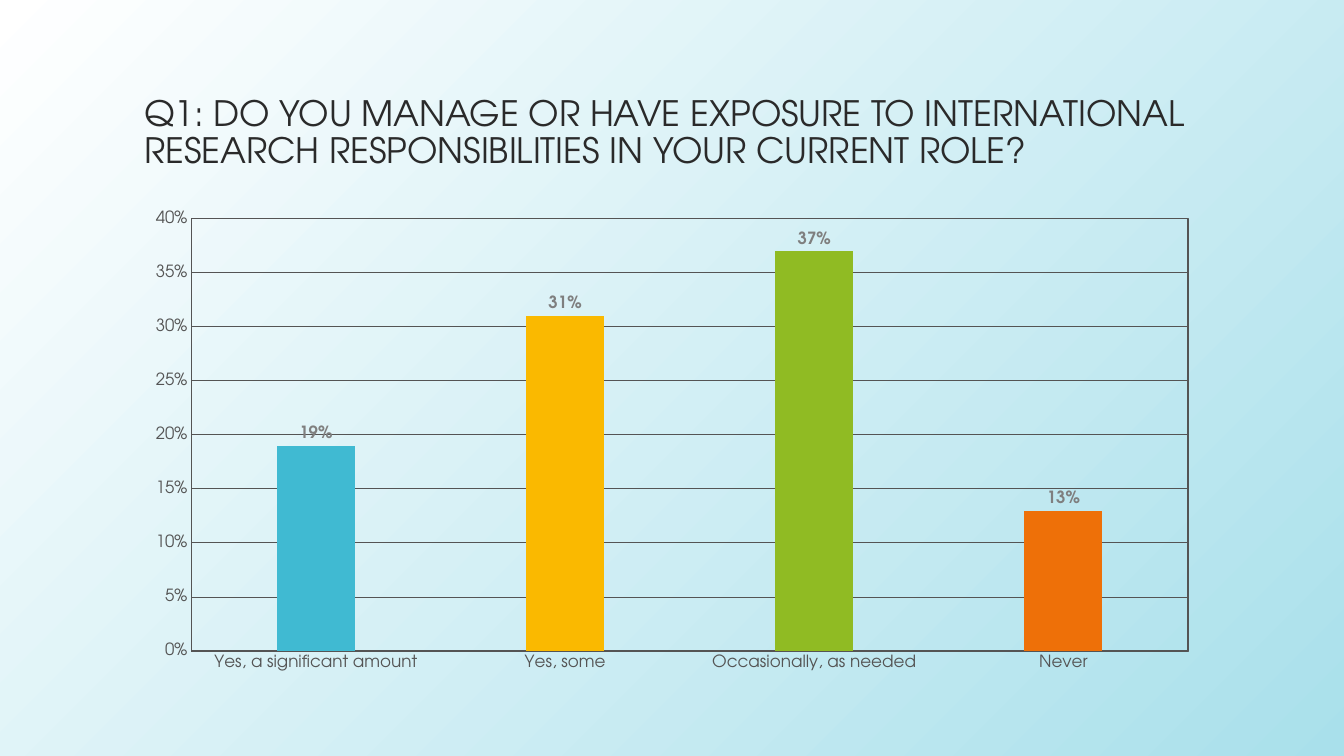
from dataclasses import dataclass

from lxml.etree import SubElement
from pptx import Presentation
from pptx.chart.chart import Chart
from pptx.chart.data import CategoryChartData
from pptx.dml.color import RGBColor
from pptx.enum.chart import XL_CHART_TYPE, XL_LABEL_POSITION, XL_TICK_MARK
from pptx.enum.text import MSO_ANCHOR
from pptx.oxml import parse_xml
from pptx.oxml.ns import nsdecls, qn
from pptx.slide import Slide
from pptx.text.text import Font
from pptx.util import Pt

FONT_NAME = "TeX Gyre Adventor"
WHITE = RGBColor(0xFF, 0xFF, 0xFF)
PALE_AQUA = RGBColor(0xA9, 0xE0, 0xEB)
INK = RGBColor(0x2A, 0x2A, 0x2A)
AXIS_GRAY = RGBColor(0x54, 0x54, 0x54)
LABEL_GRAY = RGBColor(0x7F, 0x7F, 0x7F)
BLUE = RGBColor(0x40, 0xBA, 0xD2)
YELLOW = RGBColor(0xFA, 0xB9, 0x00)
GREEN = RGBColor(0x90, 0xBB, 0x23)
ORANGE = RGBColor(0xEE, 0x70, 0x08)

LEFT, CONTENT_WIDTH = Pt(96), Pt(768)
QUESTION = (
    "Q1: DO YOU MANAGE OR HAVE EXPOSURE TO INTERNATIONAL "
    "RESEARCH RESPONSIBILITIES IN YOUR CURRENT ROLE?"
)


@dataclass(frozen=True)
class Answer:
    wording: str
    share: float
    color: RGBColor


ANSWERS = [
    Answer("Yes, a significant amount", 0.19, BLUE),
    Answer("Yes, some", 0.31, YELLOW),
    Answer("Occasionally, as needed", 0.37, GREEN),
    Answer("Never", 0.13, ORANGE),
]
PLOT_LAYOUT = {"x": 0.053, "y": 0.036, "w": 0.927, "h": 0.903}


def style_font(font: Font, size: float, color: RGBColor, bold: bool = False) -> None:
    font.name = FONT_NAME
    font.size = Pt(size)
    font.bold = bold
    font.color.rgb = color


def paint_background(slide: Slide) -> None:
    fill = slide.background.fill
    fill.gradient()
    fill.gradient_angle = 315
    for stop, color in zip(fill.gradient_stops, (WHITE, PALE_AQUA)):
        stop.color.rgb = color


def add_question(slide: Slide) -> None:
    frame = slide.shapes.add_textbox(LEFT, Pt(21.6), CONTENT_WIDTH, Pt(104.4)).text_frame
    frame.word_wrap = True
    frame.vertical_anchor = MSO_ANCHOR.BOTTOM
    frame.text = QUESTION
    paragraph = frame.paragraphs[0]
    paragraph.line_spacing = 0.9
    style_font(paragraph.runs[0].font, 25, INK)


def frame_plot_area(chart: Chart) -> None:
    plot_area = chart.element.find(f".//{qn('c:plotArea')}")
    for old_layout in plot_area.findall(qn("c:layout")):
        plot_area.remove(old_layout)
    layout = parse_xml(f"<c:layout {nsdecls('c')}/>")
    manual = SubElement(layout, qn("c:manualLayout"))
    settings = {"layoutTarget": "inner", "xMode": "edge", "yMode": "edge", **PLOT_LAYOUT}
    for tag, value in settings.items():
        SubElement(manual, qn(f"c:{tag}")).set("val", str(value))
    plot_area.insert(0, layout)
    plot_area.append(parse_xml(
        f"<c:spPr {nsdecls('c', 'a')}><a:noFill/><a:ln w='9525'><a:solidFill>"
        f"<a:srgbClr val='{AXIS_GRAY}'/></a:solidFill></a:ln></c:spPr>"
    ))


def style_axes(chart: Chart) -> None:
    for axis in (chart.category_axis, chart.value_axis):
        axis.major_tick_mark = XL_TICK_MARK.NONE
        axis.minor_tick_mark = XL_TICK_MARK.NONE
        style_font(axis.tick_labels.font, 12, AXIS_GRAY)
    category_line = chart.category_axis.format.line
    category_line.color.rgb = AXIS_GRAY
    category_line.width = Pt(1)
    shares = chart.value_axis
    shares.minimum_scale, shares.maximum_scale, shares.major_unit = 0, 0.4, 0.05
    shares.tick_labels.number_format = "0%"
    shares.tick_labels.number_format_is_linked = False
    shares.format.line.fill.background()
    gridline = shares.major_gridlines.format.line
    gridline.color.rgb = AXIS_GRAY
    gridline.width = Pt(0.75)


def style_columns(chart: Chart) -> None:
    plot = chart.plots[0]
    plot.vary_by_categories = False
    plot.gap_width = 219
    plot.overlap = -27
    series = plot.series[0]
    for index, answer in enumerate(ANSWERS):
        fill = series.points[index].format.fill
        fill.solid()
        fill.fore_color.rgb = answer.color
    labels = series.data_labels
    labels.show_value = True
    labels.position = XL_LABEL_POSITION.OUTSIDE_END
    labels.number_format = "0%"
    labels.number_format_is_linked = False
    style_font(labels.font, 12, LABEL_GRAY, bold=True)


def add_answer_chart(slide: Slide) -> None:
    survey = CategoryChartData(number_format="0%")
    survey.categories = [answer.wording for answer in ANSWERS]
    survey.add_series("Series 1", [answer.share for answer in ANSWERS])
    chart = slide.shapes.add_chart(
        XL_CHART_TYPE.COLUMN_CLUSTERED, LEFT, Pt(144), CONTENT_WIDTH, Pt(342), survey
    ).chart
    chart.has_title = False
    chart.has_legend = False
    style_font(chart.font, 10, AXIS_GRAY)
    style_axes(chart)
    style_columns(chart)
    frame_plot_area(chart)


def main() -> None:
    presentation = Presentation()
    presentation.slide_width = Pt(960)
    presentation.slide_height = Pt(540)
    slide = presentation.slides.add_slide(presentation.slide_layouts[6])
    paint_background(slide)
    add_question(slide)
    add_answer_chart(slide)
    presentation.save("out.pptx")


if __name__ == "__main__":
    main()
